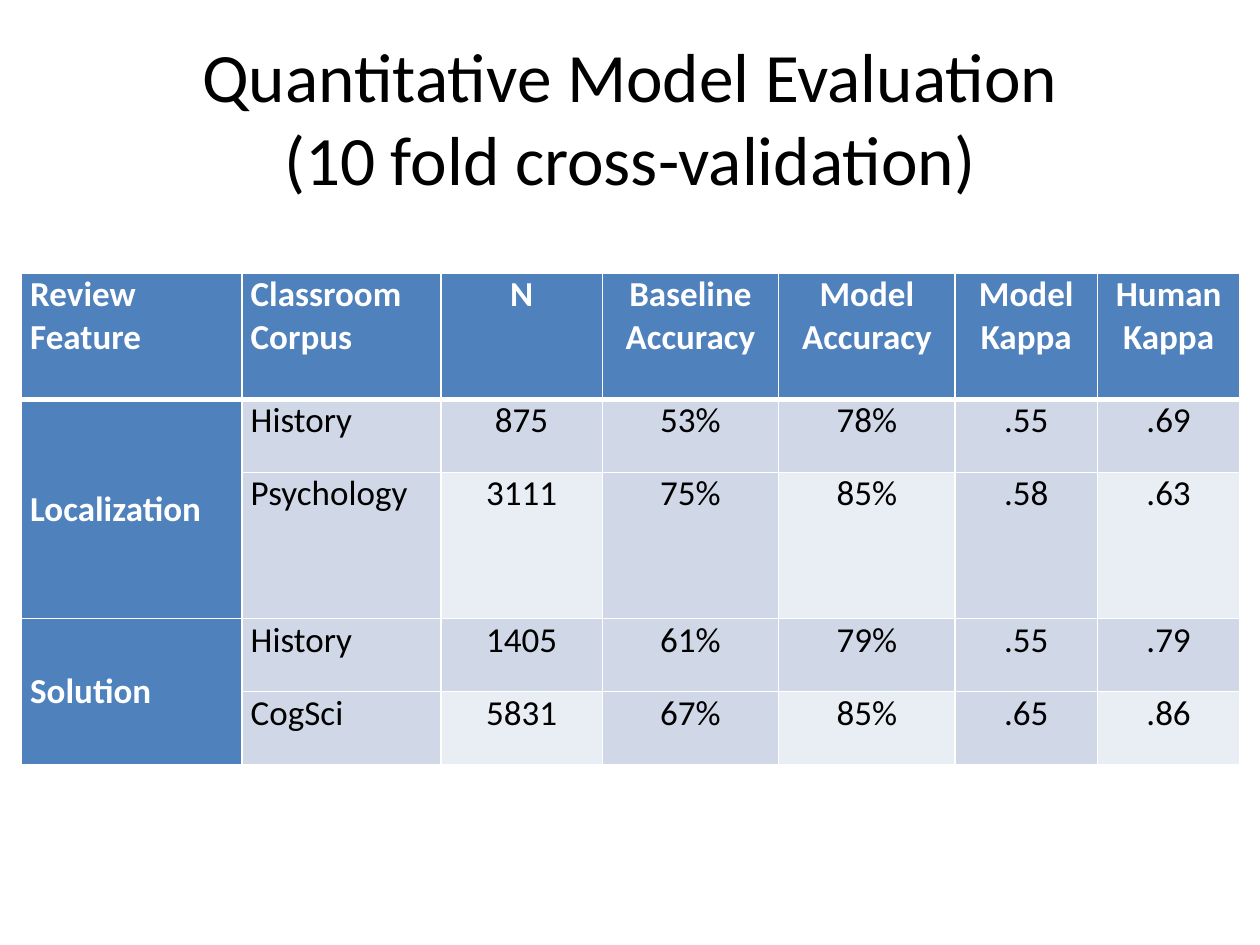
from dataclasses import dataclass

from lxml.etree import SubElement
from pptx import Presentation
from pptx.dml.color import RGBColor
from pptx.enum.text import MSO_ANCHOR as Anchor, PP_ALIGN as Align
from pptx.oxml.ns import qn
from pptx.util import Inches, Pt


@dataclass(frozen=True)
class Theme:
    """Colours, font and type sizes of the slide."""
    font: str = "Calibri"
    title_size: float = 39.6
    table_size: float = 20
    black: str = "000000"
    white: str = "FFFFFF"
    header: str = "4F81BD"
    band_dark: str = "D0D8E8"
    band_light: str = "E9EDF4"
    border: float = 1
    header_border: float = 3


THEME = Theme()
TITLE = "Quantitative Model Evaluation\v(10 fold cross-validation)"
COLUMN_WIDTHS = (1.75, 1.58, 1.28, 1.4, 1.4, 1.13, 1.13)
ROW_HEIGHTS = (1, 0.58, 1.16, 0.58, 0.58)
ROWS = (
    ("Review\nFeature", "Classroom\nCorpus", "N", "Baseline\nAccuracy",
     "Model\nAccuracy", "Model\nKappa", "Human\nKappa"),
    ("Localization", "History", "875", "53%", "78%", ".55", ".69"),
    ("", "Psychology", "3111", "75%", "85%", ".58", ".63"),
    ("Solution", "History", "1405", "61%", "79%", ".55", ".79"),
    ("", "CogSci", "5831", "67%", "85%", ".65", ".86"),
)
FEATURE_ROWS = (1, 3)


def write_text(frame, text, *, size, color, bold=False, align=Align.LEFT):
    """Fill a text frame with one formatted paragraph per line."""
    for index, line in enumerate(text.split("\n")):
        paragraph = frame.add_paragraph() if index else frame.paragraphs[0]
        paragraph.text = line
        paragraph.alignment = align
        font = paragraph.font
        for target in (font, *(run.font for run in paragraph.runs)):
            target.name = THEME.font
            target.size = Pt(size)
            target.bold = bold
            target.color.rgb = RGBColor.from_string(color)


def add_title(slide):
    """Add the centred two-line title."""
    box = slide.shapes.add_textbox(Inches(0.5), Inches(0.3), Inches(9), Inches(1.25))
    frame = box.text_frame
    frame.word_wrap = True
    frame.vertical_anchor = Anchor.MIDDLE
    write_text(frame, TITLE, size=THEME.title_size, color=THEME.black,
               align=Align.CENTER)


def set_borders(cell, **widths):
    """Draw white cell borders, given side=width in points."""
    properties = cell._tc.get_or_add_tcPr()
    for side, width in widths.items():
        line = SubElement(properties, qn(f"a:ln{side}"), w=str(Pt(width)))
        fill = SubElement(line, qn("a:solidFill"))
        SubElement(fill, qn("a:srgbClr"), val=THEME.white)


def cell_fill(row, column):
    """Return the fill colour of a cell from its row and column bands."""
    if row == 0 or column == 0:
        return THEME.header
    return THEME.band_dark if row % 2 or column % 2 else THEME.band_light


def format_cell(cell, text, row, column):
    """Write one table cell with its borders, fill and text."""
    is_heading = row == 0 or column == 0
    set_borders(cell, L=THEME.border, R=THEME.border,
                T=THEME.header_border if row == 1 else THEME.border,
                B=THEME.header_border if row == 0 else THEME.border)
    cell.fill.solid()
    cell.fill.fore_color.rgb = RGBColor.from_string(cell_fill(row, column))
    cell.margin_left = cell.margin_right = Inches(0.07)
    cell.margin_top = cell.margin_bottom = 0
    cell.vertical_anchor = Anchor.MIDDLE if row and column == 0 else Anchor.TOP
    write_text(cell.text_frame, text, size=THEME.table_size, bold=is_heading,
               color=THEME.white if is_heading else THEME.black,
               align=Align.LEFT if column < 2 else Align.CENTER)


def add_results_table(slide):
    """Add the table of accuracy and kappa by feature and corpus."""
    table = slide.shapes.add_table(
        len(ROWS), len(COLUMN_WIDTHS), Inches(0.17), Inches(2.17),
        Inches(sum(COLUMN_WIDTHS)), Inches(sum(ROW_HEIGHTS))).table
    for column, width in zip(table.columns, COLUMN_WIDTHS):
        column.width = Inches(width)
    for row, height in zip(table.rows, ROW_HEIGHTS):
        row.height = Inches(height)
    for row, texts in enumerate(ROWS):
        for column, text in enumerate(texts):
            format_cell(table.cell(row, column), text, row, column)
    for row in FEATURE_ROWS:
        table.cell(row, 0).merge(table.cell(row + 1, 0))


def main():
    """Build and save the slide."""
    presentation = Presentation()
    presentation.slide_width = Inches(10)
    presentation.slide_height = Inches(7.5)
    slide = presentation.slides.add_slide(presentation.slide_layouts[6])
    add_title(slide)
    add_results_table(slide)
    presentation.save("out.pptx")


if __name__ == "__main__":
    main()
